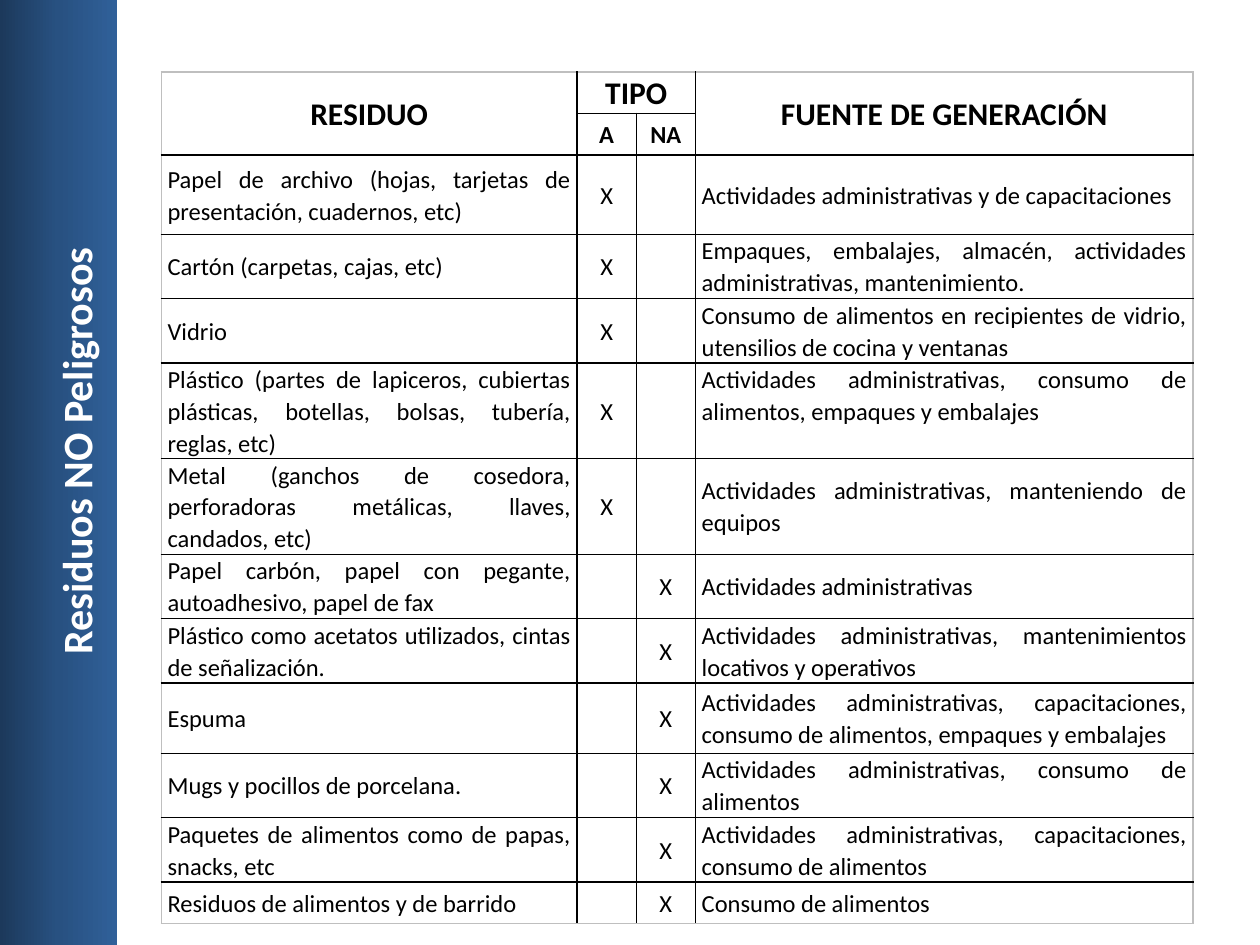
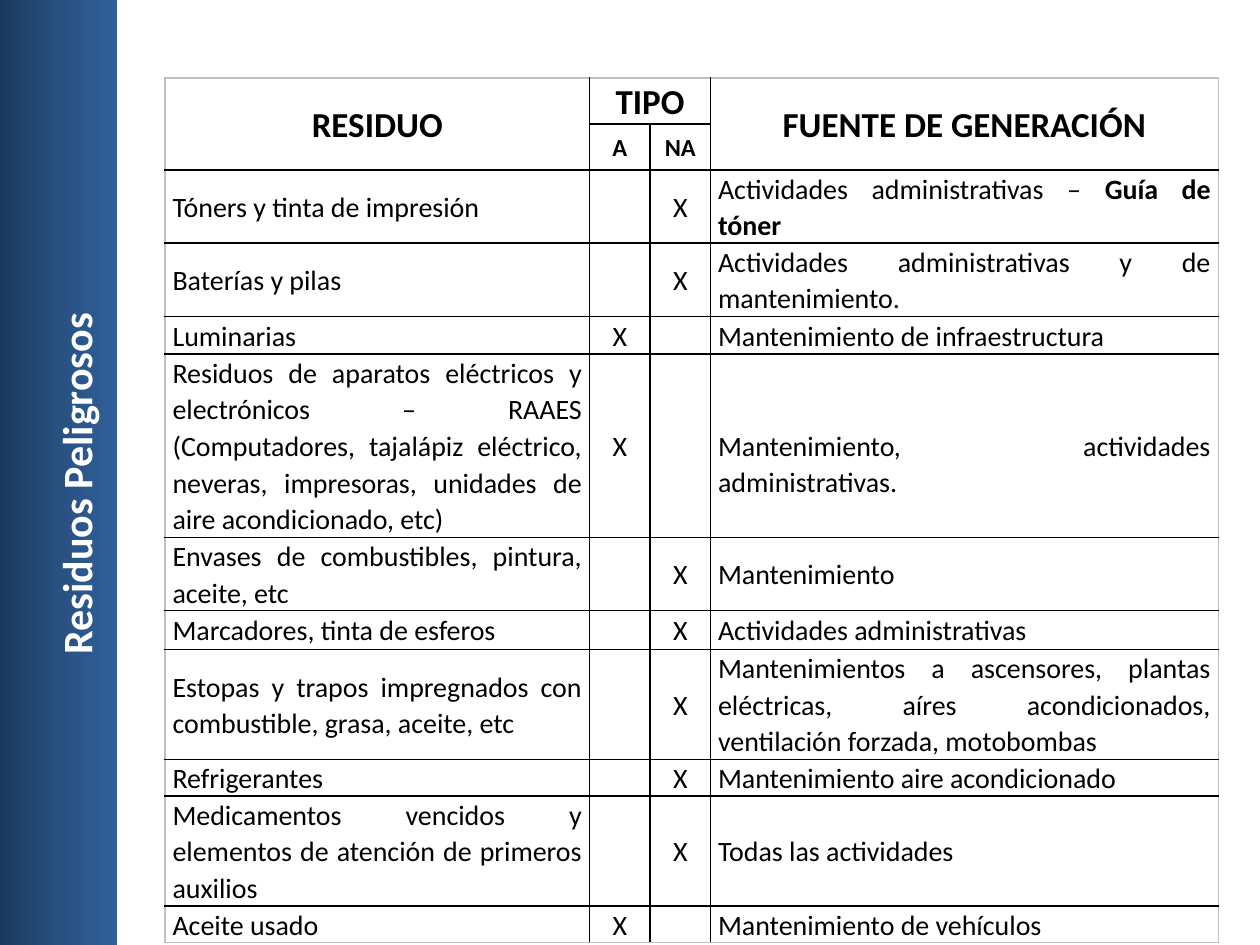
from copy import deepcopy

from lxml import etree
from pptx import Presentation
from pptx.dml.color import RGBColor
from pptx.enum import shapes, text
from pptx.oxml import ns
from pptx.util import Inches, Pt

# Shared look
FONT = "Calibri"
BLACK, WHITE, OUTER_GREY = "000000", "FFFFFF", "BFBFBF"
BAND_STOPS = [(0, "1C395B"), (0.5, "285181"), (1, "306099")]
BAND_BOX = (0, 0, 0.93, 7.5)
TITLE_BOX = (-1.89, 3.55, 4.96, 0.53)
HEADER_ROWS = 2
ALIGN, ANCHOR = text.PP_ALIGN, text.MSO_ANCHOR

# Rows: height, residue, type, runs of the source (second run is bold),
# and, for a source set from the top of its cell, its top margin
NON_HAZARDOUS = [
    (0.63, "Papel de archivo (hojas, tarjetas de presentación, cuadernos, etc)", "A",
     ["Actividades administrativas y de capacitaciones"]),
    (0.51, "Cartón (carpetas, cajas, etc)", "A",
     ["Empaques, embalajes, almacén, actividades administrativas, mantenimiento."]),
    (0.51, "Vidrio", "A",
     ["Consumo de alimentos en recipientes de vidrio, utensilios de cocina y ventanas"]),
    (0.76, "Plástico (partes de lapiceros, cubiertas plásticas, botellas, bolsas, "
     "tubería, reglas, etc)", "A",
     ["Actividades administrativas, consumo de alimentos, empaques y embalajes"], 0),
    (0.76, "Metal (ganchos de cosedora, perforadoras metálicas, llaves, candados, etc)", "A",
     ["Actividades administrativas, manteniendo de equipos"]),
    (0.51, "Papel carbón, papel con pegante, autoadhesivo, papel de fax", "NA",
     ["Actividades administrativas"]),
    (0.51, "Plástico como acetatos utilizados, cintas de señalización.", "NA",
     ["Actividades administrativas, mantenimientos locativos y operativos"]),
    (0.56, "Espuma", "NA",
     ["Actividades administrativas, capacitaciones, consumo de alimentos, "
      "empaques y embalajes"]),
    (0.51, "Mugs y pocillos de porcelana.", "NA",
     ["Actividades administrativas, consumo de alimentos"]),
    (0.51, "Paquetes de alimentos como de papas, snacks, etc", "NA",
     ["Actividades administrativas, capacitaciones, consumo de alimentos"]),
    (0.33, "Residuos de alimentos y de barrido", "NA", ["Consumo de alimentos"]),
]
HAZARDOUS = [
    (0.56, "Tóners y tinta de impresión", "NA",
     ["Actividades administrativas – ", "Guía de tóner"]),
    (0.56, "Baterías y pilas", "NA", ["Actividades administrativas y de mantenimiento."]),
    (0.3, "Luminarias", "A", ["Mantenimiento de infraestructura"]),
    (1.41, "Residuos de aparatos eléctricos y electrónicos – RAAES (Computadores, "
     "tajalápiz eléctrico, neveras, impresoras, unidades de aire acondicionado, etc)", "A",
     ["Mantenimiento, actividades administrativas."], 0.58),
    (0.56, "Envases de combustibles, pintura, aceite, etc", "NA", ["Mantenimiento"]),
    (0.31, "Marcadores, tinta de esferos", "NA", ["Actividades administrativas"]),
    (0.84, "Estopas y trapos impregnados con combustible, grasa, aceite, etc", "NA",
     ["Mantenimientos a ascensores, plantas eléctricas, aíres acondicionados, "
      "ventilación forzada, motobombas"]),
    (0.28, "Refrigerantes", "NA", ["Mantenimiento aire acondicionado"]),
    (0.84, "Medicamentos vencidos y elementos de atención de primeros auxilios", "NA",
     ["Todas las actividades"]),
    (0.28, "Aceite usado", "A", ["Mantenimiento de vehículos"]),
]
SLIDES = [
    dict(title="Residuos NO Peligrosos", corner=(1.28, 0.57), rows=NON_HAZARDOUS,
         columns=(3.3, 0.47, 0.47, 3.95), header_height=0.33,
         header_size=18, body_size=14, margin=0.05),
    dict(title="Residuos Peligrosos", corner=(1.31, 0.62), rows=HAZARDOUS,
         columns=(3.37, 0.48, 0.48, 4.03), header_height=0.35,
         header_size=20, body_size=16, margin=0.06),
]


def color(hex_value):
    return RGBColor.from_string(hex_value)


def apply(target, values):
    for name, value in values.items():
        setattr(target, name, value)


def place(shape, box):
    apply(shape, dict(zip(("left", "top", "width", "height"), map(Inches, box))))


def add_run(paragraph, words, size, bold=False, hex_value=BLACK):
    run = paragraph.add_run()
    run.text = words
    apply(run.font, dict(name=FONT, size=Pt(size), bold=bold))
    run.font.color.rgb = color(hex_value)


# Gradient band, kept on the layout
def add_band(slide, layout, box):
    band = slide.shapes.add_shape(shapes.MSO_SHAPE.RECTANGLE, *map(Inches, box))
    band.shadow.inherit = False
    band.line.fill.background()
    band.fill.gradient()
    band.fill.gradient_angle = 0
    stop_list = next(band.element.iter(ns.qn("a:gsLst")))
    stop_list.append(deepcopy(stop_list[-1]))
    for stop, (position, hex_value) in zip(band.fill.gradient_stops, BAND_STOPS):
        stop.position = position
        stop.color.rgb = color(hex_value)
    layout.shapes.element.insert(2, band.element)


# Title running up the band
def add_title(slide, words, box):
    title = slide.shapes.title
    place(title, box)
    title.rotation = 270
    apply(title.text_frame, dict(auto_size=text.MSO_AUTO_SIZE.NONE, word_wrap=True,
                                 vertical_anchor=ANCHOR.TOP))
    paragraph = title.text_frame.paragraphs[0]
    apply(paragraph, dict(alignment=ALIGN.LEFT, line_spacing=1.06, space_after=Pt(6)))
    paragraph_format = paragraph._p.get_or_add_pPr()
    paragraph_format.set("marL", str(Inches(1)))
    paragraph_format.set("indent", "0")
    add_run(paragraph, words, 24, True, WHITE)


def set_borders(cell, edges):
    cell_format = cell._tc.get_or_add_tcPr()
    for side, hex_value in edges.items():
        line = etree.SubElement(cell_format, ns.qn(f"a:ln{side}"), w=str(Pt(1)))
        fill = etree.SubElement(line, ns.qn("a:solidFill"))
        etree.SubElement(fill, ns.qn("a:srgbClr"), val=hex_value)


def fill_cell(cell, runs, size, alignment, bold=False, space_after=0):
    paragraph = cell.text_frame.paragraphs[0]
    apply(paragraph, dict(alignment=alignment, line_spacing=1.07,
                          space_after=Pt(space_after)))
    for index, words in enumerate(runs):
        add_run(paragraph, words, size, bold or index > 0)
    if not runs:
        etree.SubElement(paragraph._p, ns.qn("a:endParaRPr"), sz=str(size * 100))


def add_header(table, header_size):
    for first, last in (((0, 0), (1, 0)), ((0, 1), (0, 2)), ((0, 3), (1, 3))):
        table.cell(*first).merge(table.cell(*last))
    headings = [(0, 0, "RESIDUO", header_size), (0, 1, "TIPO", header_size),
                (0, 3, "FUENTE DE GENERACIÓN", header_size),
                (1, 1, "A", 14), (1, 2, "NA", 14)]
    for row, column, words, size in headings:
        fill_cell(table.cell(row, column), [words], size, ALIGN.CENTER, True, 8)


# Table of residues, their type and their source
def add_residue_table(slide, corner, rows, columns, header_height,
                      header_size, body_size, margin):
    heights = [header_height] * HEADER_ROWS + [row[0] for row in rows]
    box = (*corner, sum(columns), sum(heights))
    table = slide.shapes.add_table(len(heights), len(columns), *map(Inches, box)).table
    apply(table, dict(first_row=False, horz_banding=False))
    for column, width in zip(table.columns, columns):
        column.width = Inches(width)
    last_row, last_column = len(heights) - 1, len(columns) - 1
    for r, height in enumerate(heights):
        table.rows[r].height = Inches(height)
        for c in range(len(columns)):
            cell = table.cell(r, c)
            outer = dict(L=c == 0, R=c == last_column, T=r == 0, B=r == last_row)
            set_borders(cell, {side: OUTER_GREY if edge else BLACK
                               for side, edge in outer.items()})
            cell.fill.background()
            apply(cell, dict(margin_left=Inches(margin), margin_right=Inches(margin),
                             margin_top=0, margin_bottom=0,
                             vertical_anchor=ANCHOR.MIDDLE))
    add_header(table, header_size)
    for r, (_, residue, kind, source, *source_top) in enumerate(rows, HEADER_ROWS):
        fill_cell(table.cell(r, 0), [residue], body_size, ALIGN.JUSTIFY)
        for c, name in enumerate(("A", "NA"), 1):
            fill_cell(table.cell(r, c), ["X"] if kind == name else [],
                      body_size, ALIGN.CENTER)
        source_cell = table.cell(r, last_column)
        fill_cell(source_cell, source, body_size, ALIGN.JUSTIFY)
        if source_top:
            apply(source_cell, dict(vertical_anchor=ANCHOR.TOP,
                                    margin_top=Inches(source_top[0])))


def main():
    presentation = Presentation()
    apply(presentation, dict(slide_width=Inches(10), slide_height=Inches(7.5)))
    layout = presentation.slide_layouts.get_by_name("Title Only")
    for index, content in enumerate(SLIDES):
        slide = presentation.slides.add_slide(layout)
        if index == 0:
            add_band(slide, layout, BAND_BOX)
        table_values = dict(content)
        add_title(slide, table_values.pop("title"), TITLE_BOX)
        add_residue_table(slide, **table_values)
    presentation.save("out.pptx")


if __name__ == "__main__":
    main()
